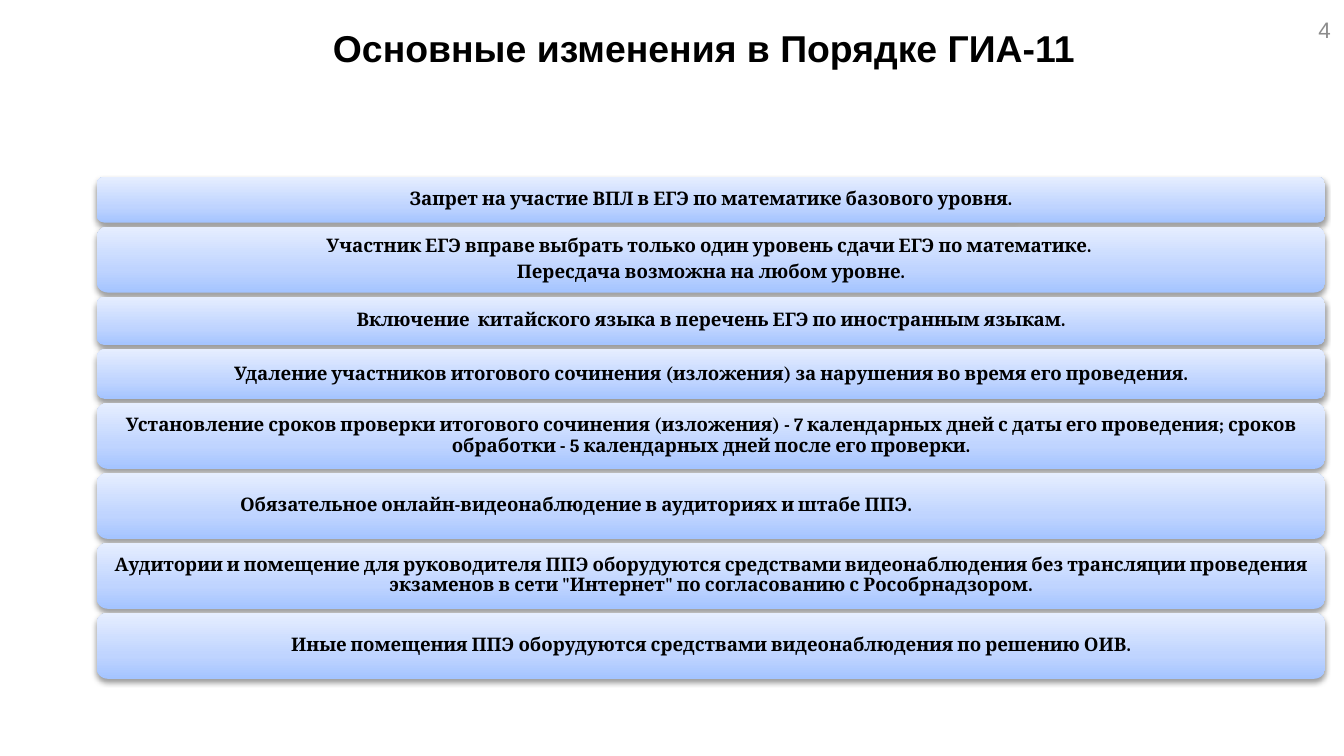
from copy import deepcopy

from lxml.etree import SubElement
from pptx import Presentation
from pptx.dml.color import RGBColor
from pptx.enum.shapes import MSO_SHAPE
from pptx.enum.text import MSO_ANCHOR, MSO_AUTO_SIZE, PP_ALIGN
from pptx.oxml.ns import qn
from pptx.util import Inches, Pt

BLACK = RGBColor(0x00, 0x00, 0x00)
GRAY = RGBColor(0x8C, 0x8C, 0x8C)
BAND_STOPS = [
    (0, RGBColor(0xA4, 0xC4, 0xFF)),
    (0.35, RGBColor(0xBF, 0xD4, 0xFF)),
    (1, RGBColor(0xE6, 0xEE, 0xFF)),
]
WIDTH = Inches(10)
HEIGHT = WIDTH * 9 // 16
GAP = 3
INSET = Inches(0.04)
CHANGES = [
    (34, 0, ["Запрет на участие ВПЛ в ЕГЭ по математике базового уровня."]),
    (49, 0, ["Участник ЕГЭ вправе выбрать только один уровень сдачи ЕГЭ по математике. ",
             "Пересдача возможна на любом уровне."]),
    (36, 0, ["Включение  китайского языка в перечень ЕГЭ по иностранным языкам."]),
    (37, 0, ["Удаление участников итогового сочинения (изложения) за нарушения во время его проведения."]),
    (49, 0, ["Установление сроков проверки итогового сочинения (изложения) - 7 календарных дней "
             "с даты его проведения; сроков обработки - 5 календарных дней после его проверки."]),
    (49, 0.22, ["Обязательное онлайн-видеонаблюдение в аудиториях и штабе ППЭ."]),
    (49, 0, ["Аудитории и помещение для руководителя ППЭ оборудуются средствами видеонаблюдения "
             "без трансляции проведения экзаменов в сети \"Интернет\" по согласованию с Рособрнадзором."]),
    (49, 0, ["Иные помещения ППЭ оборудуются средствами видеонаблюдения по решению ОИВ."]),
]


def percent_box(x, y, w, h):
    return tuple(int(share * side / 100)
                 for share, side in zip((x, y, w, h), (WIDTH, HEIGHT) * 2))


def set_font(p, name, size, color, bold=False):
    p.font.name = name
    p.font.size = Pt(size)
    p.font.color.rgb = color
    p.font.bold = bold


def add_title(s, box):
    sp = s.shapes.title
    sp.left, sp.top, sp.width, sp.height = box
    tf = sp.text_frame
    tf.text = "Основные изменения в Порядке ГИА-11"
    tf.auto_size = MSO_AUTO_SIZE.NONE
    tf.vertical_anchor = MSO_ANCHOR.TOP
    p = tf.paragraphs[0]
    p.alignment = PP_ALIGN.CENTER
    set_font(p, "Arial", 20, BLACK, True)


def add_page_number(s, box):
    tf = s.shapes.add_textbox(*box).text_frame
    tf.word_wrap = True
    tf.vertical_anchor = MSO_ANCHOR.MIDDLE
    tf.text = "4"
    p = tf.paragraphs[0]
    p.alignment = PP_ALIGN.RIGHT
    set_font(p, "Arial", 12, GRAY)


def style_band(sp):
    sp.line.fill.background()
    sp.fill.gradient()
    sp.fill.gradient_angle = 90
    stops = sp._element.spPr.find(qn("a:gradFill")).find(qn("a:gsLst"))
    stops.insert(1, deepcopy(stops[0]))
    for stop, (position, color) in zip(sp.fill.gradient_stops, BAND_STOPS):
        stop.position = position
        stop.color.rgb = color
    sp.shadow.inherit = False
    effects = sp._element.spPr.find(qn("a:effectLst"))
    shadow = SubElement(effects, qn("a:outerShdw"), blurRad=str(Pt(3.1)),
                        dist=str(Pt(1.6)), dir="5400000", rotWithShape="0")
    color = SubElement(shadow, qn("a:srgbClr"), val=str(BLACK))
    SubElement(color, qn("a:alpha"), val="38000")


def add_band(s, box, lines, right_share):
    sp = s.shapes.add_shape(MSO_SHAPE.ROUNDED_RECTANGLE, *box)
    style_band(sp)
    tf = sp.text_frame
    tf.word_wrap = True
    tf.vertical_anchor = MSO_ANCHOR.MIDDLE
    tf.margin_left = tf.margin_top = tf.margin_bottom = INSET
    tf.margin_right = INSET + int(box[2] * right_share)
    tf.text = "\n".join(lines)
    for p in tf.paragraphs:
        p.alignment = PP_ALIGN.CENTER
        p.line_spacing = 0.9
        set_font(p, "Cambria", 10, BLACK, True)
    for p in tf.paragraphs[:-1]:
        p.space_after = Pt(3.5)


def add_changes(s, box):
    left, top, width, height = box
    unit = height / (sum(rows for rows, _, _ in CHANGES) + GAP * (len(CHANGES) - 1))
    row = 0
    for rows, right_share, lines in CHANGES:
        band = left, int(top + row * unit), width, int(rows * unit)
        add_band(s, band, lines, right_share)
        row += rows + GAP


def main():
    prs = Presentation()
    prs.slide_width, prs.slide_height = WIDTH, HEIGHT
    s = prs.slides.add_slide(prs.slide_layouts[5])
    add_title(s, percent_box(7.1, 2.5, 90.6, 15))
    add_page_number(s, percent_box(76.7, 0.36, 23.3, 7.1))
    add_changes(s, percent_box(7.2, 23.4, 91.4, 66.4))
    prs.save("out.pptx")


if __name__ == "__main__":
    main()
